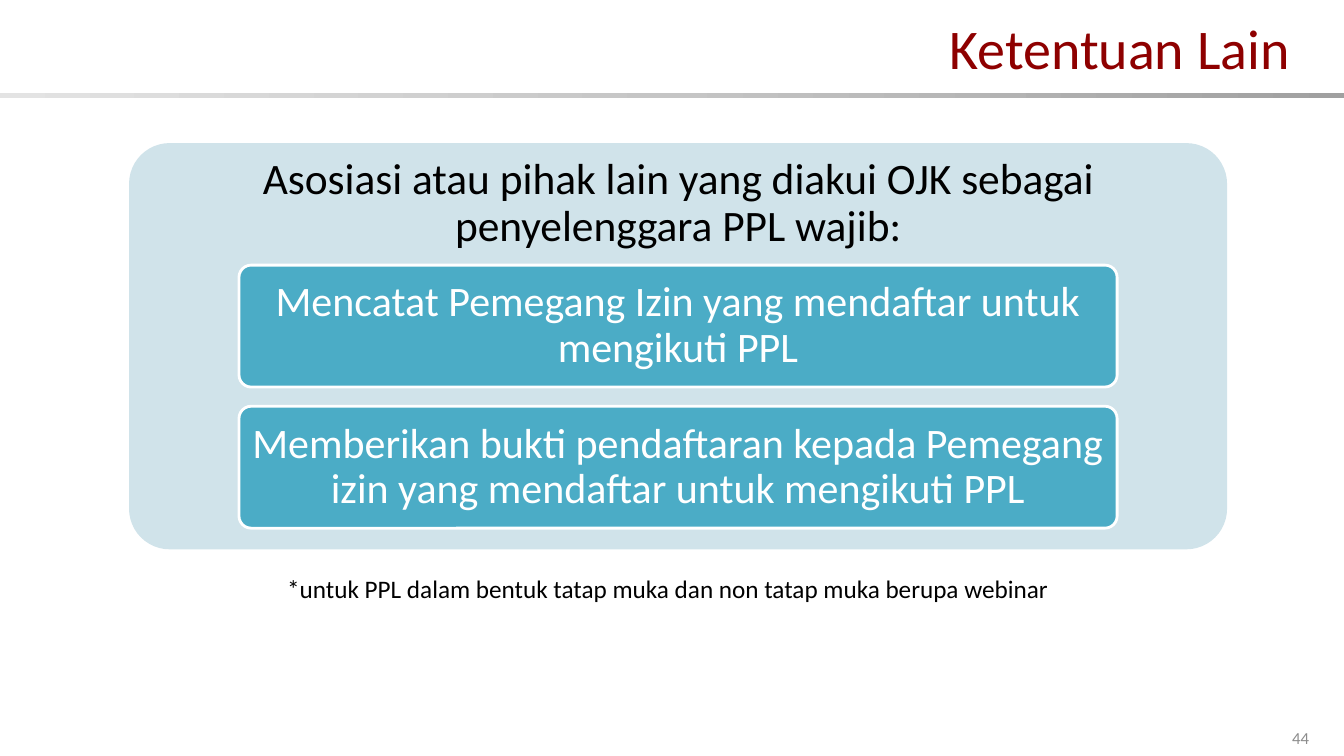
from copy import deepcopy

from pptx import Presentation
from pptx.dml.color import RGBColor
from pptx.enum.shapes import MSO_SHAPE
from pptx.enum.text import MSO_ANCHOR, PP_ALIGN
from pptx.util import Inches, Pt

FONT = "Calibri"
CARDS = [
    "Mencatat Pemegang Izin yang mendaftar untuk mengikuti PPL",
    "Memberikan bukti pendaftaran kepada Pemegang izin yang mendaftar untuk mengikuti PPL",
]


def color(value):
    return RGBColor.from_string(value)


def write(shape, text, size, ink, align=PP_ALIGN.CENTER, inset=(0.1, 0.05), spacing=1.0, wrap=True):
    frame = shape.text_frame
    frame.word_wrap = wrap
    frame.vertical_anchor = MSO_ANCHOR.MIDDLE
    frame.margin_left = frame.margin_right = Inches(inset[0])
    frame.margin_top = frame.margin_bottom = Inches(inset[1])
    paragraph = frame.paragraphs[0]
    paragraph.text = text
    paragraph.alignment = align
    paragraph.line_spacing = spacing
    paragraph.font.name = FONT
    paragraph.font.size = Pt(size)
    paragraph.font.color.rgb = color(ink)


def add_text(slide, box, text, size, ink, **options):
    shape = slide.shapes.add_textbox(*map(Inches, box))
    write(shape, text, size, ink, **options)


def add_rounded(slide, box, fill, line=None):
    shape = slide.shapes.add_shape(MSO_SHAPE.ROUNDED_RECTANGLE, *map(Inches, box))
    shape.adjustments[0] = 0.1
    shape.shadow.inherit = False
    shape.fill.solid()
    shape.fill.fore_color.rgb = color(fill)
    if line:
        shape.line.color.rgb = color(line)
        shape.line.width = Pt(2)
    else:
        shape.line.fill.background()
    return shape


def add_gradient_bar(slide, box, tones):
    shape = slide.shapes.add_shape(MSO_SHAPE.RECTANGLE, *map(Inches, box))
    shape.shadow.inherit = False
    shape.line.fill.background()
    shape.fill.gradient()
    shape.fill.gradient_angle = 180
    first = shape.fill.gradient_stops[0]._gs
    first.addnext(deepcopy(first))
    for index, (stop, tone) in enumerate(zip(shape.fill.gradient_stops, tones)):
        stop.position = index / (len(tones) - 1)
        stop.color.rgb = color(tone)


def main():
    presentation = Presentation()
    presentation.slide_width = Inches(13.33)
    presentation.slide_height = Inches(7.5)
    slide = presentation.slides.add_slide(presentation.slide_layouts[6])

    add_gradient_bar(slide, (0, 0.92, 13.33, 0.05), ["A0A0A0", "C5C5C5", "E3E3E3"])
    add_text(slide, (2.02, 0.17, 10.87, 0.59), "Ketentuan Lain", 40, "8E0000", align=PP_ALIGN.RIGHT)

    add_rounded(slide, (1.28, 1.42, 10.89, 4.03), "D0E3EA")
    add_text(slide, (1.28, 1.42, 10.89, 1.21),
             "Asosiasi atau pihak lain yang diakui OJK sebagai penyelenggara PPL wajib:",
             31, "000000", inset=(0.13, 0.13), spacing=0.9)
    for index, text in enumerate(CARDS):
        card = add_rounded(slide, (2.37, 2.63 + 1.4 * index, 8.71, 1.21), "4BACC6", "FFFFFF")
        write(card, text, 30, "FFFFFF", inset=(0.08, 0.06), spacing=0.9)

    add_text(slide, (2.75, 5.64, 7.84, 0.4),
             "*untuk PPL dalam bentuk tatap muka dan non tatap muka berupa webinar",
             18, "000000", align=PP_ALIGN.LEFT, wrap=False)
    add_text(slide, (12.67, 7.14, 0.46, 0.36), "44", 12, "8C8C8C")

    presentation.save("out.pptx")


if __name__ == "__main__":
    main()
